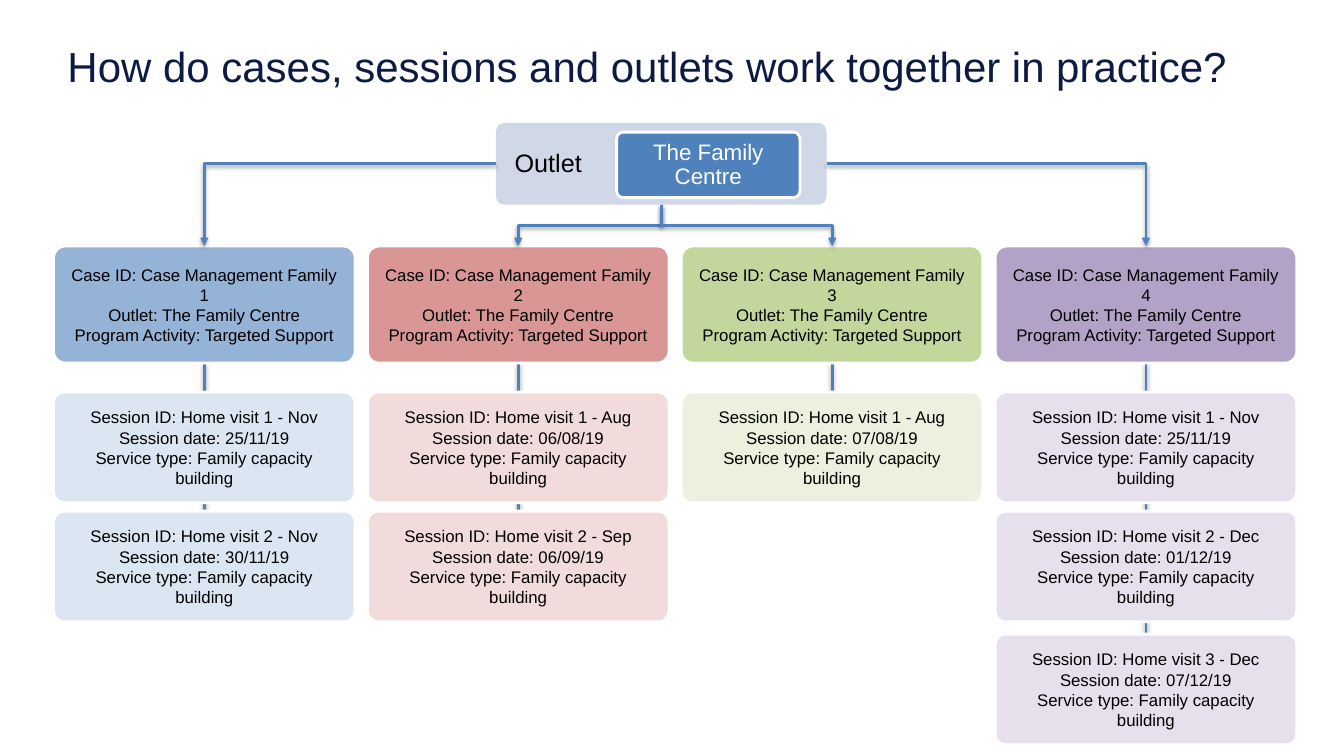
import pptx
import pptx.util
import pptx.dml.color
import pptx.enum.shapes
import pptx.enum.text
import pptx.oxml
import pptx.oxml.ns

Cm = pptx.util.Cm
Pt = pptx.util.Pt
CONNECTOR = pptx.enum.shapes.MSO_CONNECTOR
ALIGN = pptx.enum.text.PP_ALIGN
ANCHOR = pptx.enum.text.MSO_ANCHOR

COLOURS = {
    "title": "0D1B43", "text": "000000", "white": "FFFFFF",
    "panel": "D0D8E8", "accent": "4F81BD",
}
FAMILIES = [
    ("95B3D7", "DCE6F2", [("Nov", "25/11/19"), ("Nov", "30/11/19")]),
    ("D99694", "F2DCDB", [("Aug", "06/08/19"), ("Sep", "06/09/19")]),
    ("C3D69B", "EBF1DE", [("Aug", "07/08/19")]),
    ("B3A2C7", "E6E0EC", [("Nov", "25/11/19"), ("Dec", "01/12/19"), ("Dec", "07/12/19")]),
]
COLUMN_LEFT, COLUMN_PITCH, CARD_WIDTH = 1.35, 7.91, 7.6
CASE_TOP, CASE_HEIGHT = 6.2, 2.95
SESSION_TOPS, SESSION_HEIGHT = [9.88, 12.88, 15.98], 2.79
PANEL = (12.5, 3.1, 8.33, 2.06)
SHADOW = (
    '<a:effectLst %s><a:outerShdw blurRad="40000" dist="20000" dir="5400000" rotWithShape="0">'
    '<a:srgbClr val="000000"><a:alpha val="38000"/></a:srgbClr></a:outerShdw></a:effectLst>'
    % pptx.oxml.ns.nsdecls("a")
)


def rgb(colour):
    return pptx.dml.color.RGBColor.from_string(colour)


def style_text(frame, lines, size, colour, align, spacing=1.0):
    frame.text = "\n".join(lines)
    for paragraph in frame.paragraphs:
        paragraph.alignment = align
        paragraph.line_spacing = spacing
        paragraph.font.name = "Arial"
        paragraph.font.size = Pt(size)
        paragraph.font.color.rgb = rgb(colour)


def add_title(slide, wording):
    title = slide.shapes.title
    title.left, title.top, title.width, title.height = Cm(1.7), Cm(1.02), Cm(30.48), Cm(1.68)
    frame = title.text_frame
    frame.margin_left = frame.margin_right = frame.margin_top = frame.margin_bottom = 0
    frame.auto_size = pptx.enum.text.MSO_AUTO_SIZE.NONE
    frame.vertical_anchor = ANCHOR.TOP
    style_text(frame, [wording], 30, COLOURS["title"], ALIGN.LEFT)


def add_card(slide, box, fill, lines, size=12, colour=COLOURS["text"],
             align=ALIGN.CENTER, inset=0.33, spacing=1.0, outlined=True):
    card = slide.shapes.add_shape(
        pptx.enum.shapes.MSO_SHAPE.ROUNDED_RECTANGLE, *map(Cm, box))
    card.adjustments[0] = 0.1
    card.shadow.inherit = False
    card.fill.solid()
    card.fill.fore_color.rgb = rgb(fill)
    if outlined:
        card.line.color.rgb = rgb(COLOURS["white"])
        card.line.width = Pt(2)
    else:
        card.line.fill.background()
    frame = card.text_frame
    frame.word_wrap = True
    frame.vertical_anchor = ANCHOR.MIDDLE
    frame.margin_left = frame.margin_right = Cm(inset)
    frame.margin_top = frame.margin_bottom = Cm(0.2)
    style_text(frame, lines, size, colour, align, spacing)


def add_link(slide, kind, start, end, arrow=False):
    link = slide.shapes.add_connector(kind, *map(Cm, start + end))
    link.line.color.rgb = rgb(COLOURS["accent"])
    link.line.width = Pt(2)
    properties = link._element.spPr
    if arrow:
        properties.find(pptx.oxml.ns.qn("a:ln")).append(pptx.oxml.parse_xml(
            '<a:tailEnd %s type="triangle"/>' % pptx.oxml.ns.nsdecls("a")))
    properties.append(pptx.oxml.parse_xml(SHADOW))
    return properties


def add_side_arrow(slide, start, end):
    properties = add_link(slide, CONNECTOR.ELBOW, start, end, arrow=True)
    properties.find(pptx.oxml.ns.qn("a:prstGeom")).set("prst", "bentConnector2")


def add_branch_arrow(slide, start, end):
    middle_x, middle_y = (start[0] + end[0]) / 2, (start[1] + end[1]) / 2
    half_span, half_drop = abs(end[0] - start[0]) / 2, (end[1] - start[1]) / 2
    to_right = end[0] > start[0]
    if to_right:
        half_drop = -half_drop
    properties = add_link(
        slide, CONNECTOR.ELBOW,
        (middle_x - half_drop, middle_y - half_span),
        (middle_x + half_drop, middle_y + half_span), arrow=True)
    turn = 270 if to_right else 90
    properties.find(pptx.oxml.ns.qn("a:xfrm")).set("rot", str(turn * 60000))


def add_outlet(slide):
    add_card(slide, PANEL, COLOURS["panel"], ["Outlet"], size=18,
             align=ALIGN.LEFT, inset=0.41, spacing=0.9, outlined=False)
    add_card(slide, (15.54, 3.33, 4.62, 1.65), COLOURS["accent"], ["The Family Centre"],
             size=16, colour=COLOURS["white"], inset=0.25, spacing=0.9)


def add_family(slide, number, left, case_fill, session_fill, sessions):
    centre = left + CARD_WIDTH / 2
    add_link(slide, CONNECTOR.STRAIGHT, (centre, CASE_TOP + CASE_HEIGHT),
             (centre, SESSION_TOPS[len(sessions) - 1]))
    add_card(slide, (left, CASE_TOP, CARD_WIDTH, CASE_HEIGHT), case_fill, [
        f"Case ID: Case Management Family {number}",
        "Outlet: The Family Centre",
        "Program Activity: Targeted Support",
    ])
    for visit, (top, (month, date)) in enumerate(zip(SESSION_TOPS, sessions), 1):
        add_card(slide, (left, top, CARD_WIDTH, SESSION_HEIGHT), session_fill, [
            f"Session ID: Home visit {visit} - {month}",
            f"Session date: {date}",
            "Service type: Family capacity building",
        ])


def main():
    presentation = pptx.Presentation()
    presentation.slide_width, presentation.slide_height = Cm(33.87), Cm(19.05)
    slide = presentation.slides.add_slide(presentation.slide_layouts[5])
    add_title(slide, "How do cases, sessions and outlets work together in practice?")
    add_outlet(slide)

    centres = []
    for index, family in enumerate(FAMILIES):
        left = COLUMN_LEFT + index * COLUMN_PITCH
        centres.append(left + CARD_WIDTH / 2)
        add_family(slide, index + 1, left, *family)

    left, top, width, height = PANEL
    middle = top + height / 2
    add_side_arrow(slide, (left, middle), (centres[0], CASE_TOP))
    add_side_arrow(slide, (left + width, middle), (centres[3], CASE_TOP))
    for centre in centres[1:3]:
        add_branch_arrow(slide, (left + width / 2, top + height), (centre, CASE_TOP))

    presentation.save("out.pptx")


if __name__ == "__main__":
    main()
